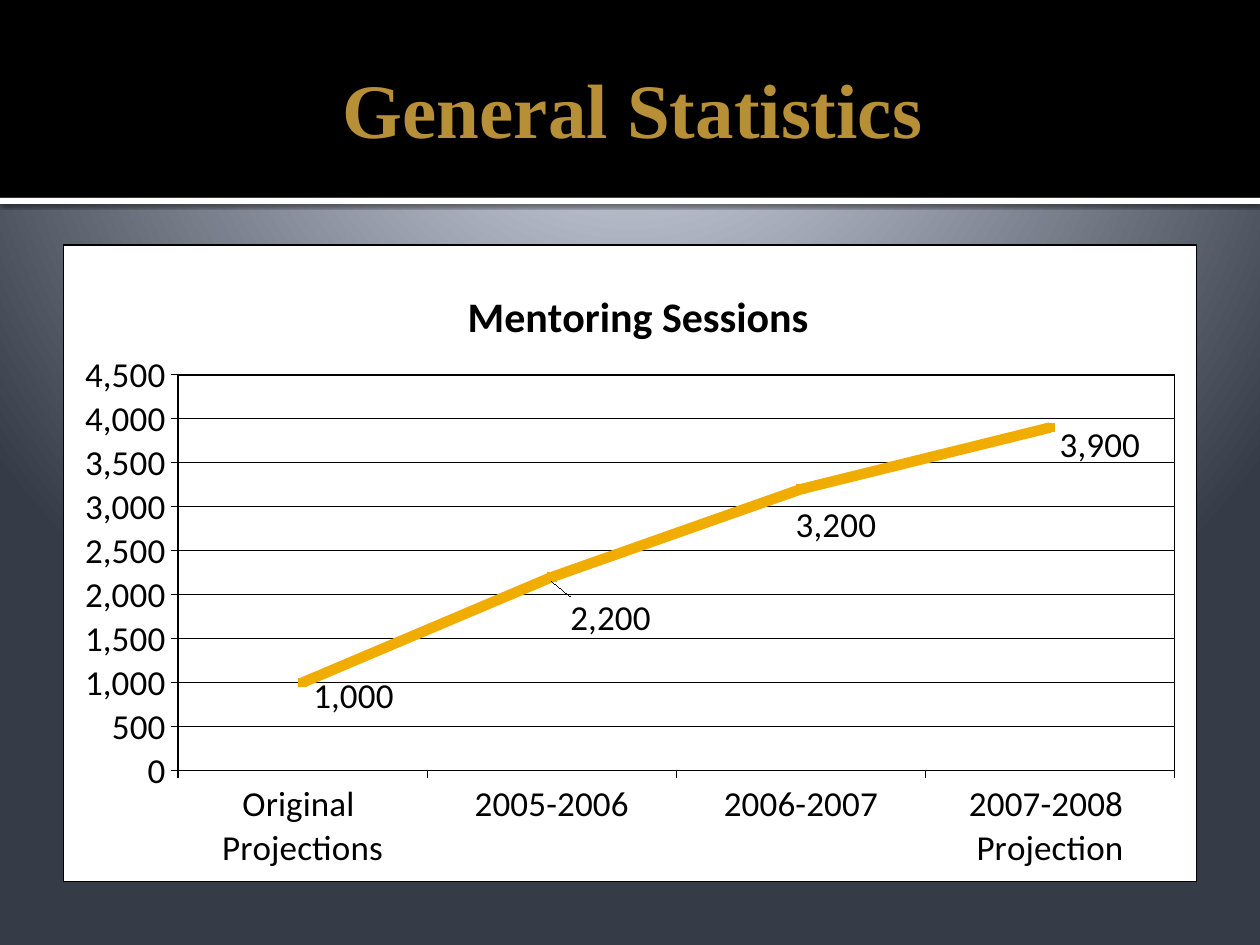
"""Build the General Statistics slide with its mentoring line chart."""
import pptx
import pptx.chart.data
import pptx.dml.color
import pptx.enum.chart
import pptx.enum.shapes
import pptx.enum.text
import pptx.oxml
import pptx.oxml.ns
import pptx.util

Pt = pptx.util.Pt
TITLE = "General Statistics"
NAME = "Mentoring Sessions"
POINTS = [
    ("Original \nProjections", 1000, (0.045, -0.028)),
    ("2005-2006", 2200, (0.052, 0.016)),
    ("2006-2007", 3200, (0.031, 0.008)),
    ("2007-2008 \nProjection", 3900, (0.044, -0.022)),
]
BANDS = [("FFFFFF", 113, 3.6), ("000000", 0, 113)]
STOPS = [(0, "C1C5D3"), (12, "C1C5D3"), (20, "BFC4D2"), (100, "353B47")]
GOLD = "F0AD00"
PLOT = {"x": 0.101, "y": 0.204, "w": 0.88, "h": 0.622}
HEAD = {"x": 0.35, "y": 0.055}
TEXT = {"name": "Calibri", "size": Pt(20), "bold": False}
BIG = {"name": "Calibri", "size": Pt(24), "bold": True}
FRAME = {
    "word_wrap": True, "vertical_anchor": pptx.enum.text.MSO_ANCHOR.MIDDLE,
    "margin_left": Pt(7.2), "margin_right": Pt(3.6),
    "margin_top": Pt(3.6), "margin_bottom": Pt(3.6),
}
AXIS = {
    "major_tick_mark": pptx.enum.chart.XL_TICK_MARK.OUTSIDE,
    "minor_tick_mark": pptx.enum.chart.XL_TICK_MARK.NONE,
}
SCALE = {"minimum_scale": 0, "maximum_scale": 4500, "major_unit": 500,
         "has_major_gridlines": True}


def rgb(code):
    return pptx.dml.color.RGBColor.from_string(code)


def put(item, vals):
    for key, val in vals.items():
        setattr(item, key, val)


def ink(font, vals, code="000000"):
    put(font, vals)
    font.color.rgb = rgb(code)


def paint(fill, code):
    fill.solid()
    fill.fore_color.rgb = rgb(code)


def stroke(line, code="000000", width=0.75):
    paint(line.fill, code)
    line.width = Pt(width)


def node(tag, body):
    spaces = pptx.oxml.ns.nsdecls("a", "c")
    return pptx.oxml.parse_xml(f"<{tag} {spaces}>{body}</{tag}>")


def place(spots, inner=False):
    body = '<c:layoutTarget val="inner"/>' if inner else ""
    if inner or spots is HEAD:
        body += '<c:xMode val="edge"/><c:yMode val="edge"/>'
    body += "".join(f'<c:{key} val="{val}"/>' for key, val in spots.items())
    return node("c:layout", f"<c:manualLayout>{body}</c:manualLayout>")


def panel():
    tint = '<a:solidFill><a:srgbClr val="{}"/></a:solidFill>'
    edge = f'<a:ln w="{Pt(0.75)}">{tint.format("000000")}</a:ln>'
    return node("c:spPr", tint.format("FFFFFF") + edge)


def back(slide):
    slide.background.fill.solid()
    stops = "".join(f'<a:gs pos="{pos * 1000}"><a:srgbClr val="{code}"/></a:gs>'
                    for pos, code in STOPS)
    grad = node("a:gradFill", f'<a:gsLst>{stops}</a:gsLst><a:path path="circle">'
                '<a:fillToRect l="10000" t="-25000" r="10000" b="125000"/></a:path>')
    old = slide.element.xpath("p:cSld/p:bg/p:bgPr/a:solidFill")[0]
    old.getparent().replace(old, grad)


def bands(slide):
    for code, top, high in BANDS:
        band = slide.shapes.add_shape(pptx.enum.shapes.MSO_SHAPE.RECTANGLE,
                                      0, Pt(top), Pt(720), Pt(high))
        paint(band.fill, code)
        band.line.fill.background()
        band.shadow.inherit = False
        if top:
            band.element.spPr.xpath("a:effectLst")[0].append(node(
                "a:effectLst", f'<a:outerShdw blurRad="{Pt(2.5)}" dist="{Pt(0.8)}" '
                'dir="5400000"><a:srgbClr val="000000"><a:alpha val="60000"/>'
                "</a:srgbClr></a:outerShdw>")[0])


def title(slide):
    frame = slide.shapes.add_textbox(Pt(36), Pt(12.2), Pt(648), Pt(98.6)).text_frame
    put(frame, FRAME)
    para = frame.paragraphs[0]
    para.alignment = pptx.enum.text.PP_ALIGN.CENTER
    run = para.add_run()
    run.text = TITLE
    ink(run.font, {"name": "Times New Roman", "size": Pt(44), "bold": True}, "B78F37")


def graph(slide):
    data = pptx.chart.data.CategoryChartData(number_format="#,##0")
    data.categories = [name for name, _, _ in POINTS]
    data.add_series(NAME, [val for _, val, _ in POINTS])
    kind = pptx.enum.chart.XL_CHART_TYPE.LINE_MARKERS_STACKED
    chart = slide.shapes.add_chart(kind, Pt(36), Pt(139.7), Pt(648), Pt(364.3), data).chart
    ink(chart.font, TEXT)
    chart.has_legend = False
    chart.plots[0].vary_by_categories = False

    head = chart.chart_title
    head.text_frame.text = NAME
    ink(head.text_frame.paragraphs[0].runs[0].font, BIG)
    for old in head.element.xpath("c:layout"):
        head.element.remove(old)
    head.element.xpath("c:tx")[0].addnext(place(HEAD))

    for axis in (chart.category_axis, chart.value_axis):
        put(axis, AXIS)
        stroke(axis.format.line)
        ink(axis.tick_labels.font, TEXT)
    axis = chart.value_axis
    put(axis, SCALE)
    put(axis.tick_labels, {"number_format": "#,##0", "number_format_is_linked": False})
    stroke(axis.major_gridlines.format.line)

    line = chart.plots[0].series[0]
    line.smooth = False
    stroke(line.format.line, GOLD, 6)
    put(line.marker, {"style": pptx.enum.chart.XL_MARKER_STYLE.SQUARE, "size": 5})
    paint(line.marker.format.fill, GOLD)
    line.marker.format.line.fill.background()
    for num, (_, _, (right, down)) in enumerate(POINTS):
        label = line.points[num].data_label
        ink(label.font, TEXT)
        label.position = pptx.enum.chart.XL_LABEL_POSITION.BELOW
        mark = line.data_labels._element.xpath(f"c:dLbl/c:idx[@val='{num}']")[0]
        mark.addnext(place({"x": right, "y": down}))

    root = chart.element.xpath("c:chart")[0]
    area = root.xpath("c:plotArea")[0]
    for old in area.xpath("c:layout"):
        area.remove(old)
    area.insert(0, place(PLOT, True))
    area.append(panel())
    root.addnext(panel())


def main():
    deck = pptx.Presentation()
    put(deck, {"slide_width": Pt(720), "slide_height": Pt(540)})
    slide = deck.slides.add_slide(deck.slide_layouts[6])
    for draw in (back, bands, title, graph):
        draw(slide)
    deck.save("out.pptx")


if __name__ == "__main__":
    main()
